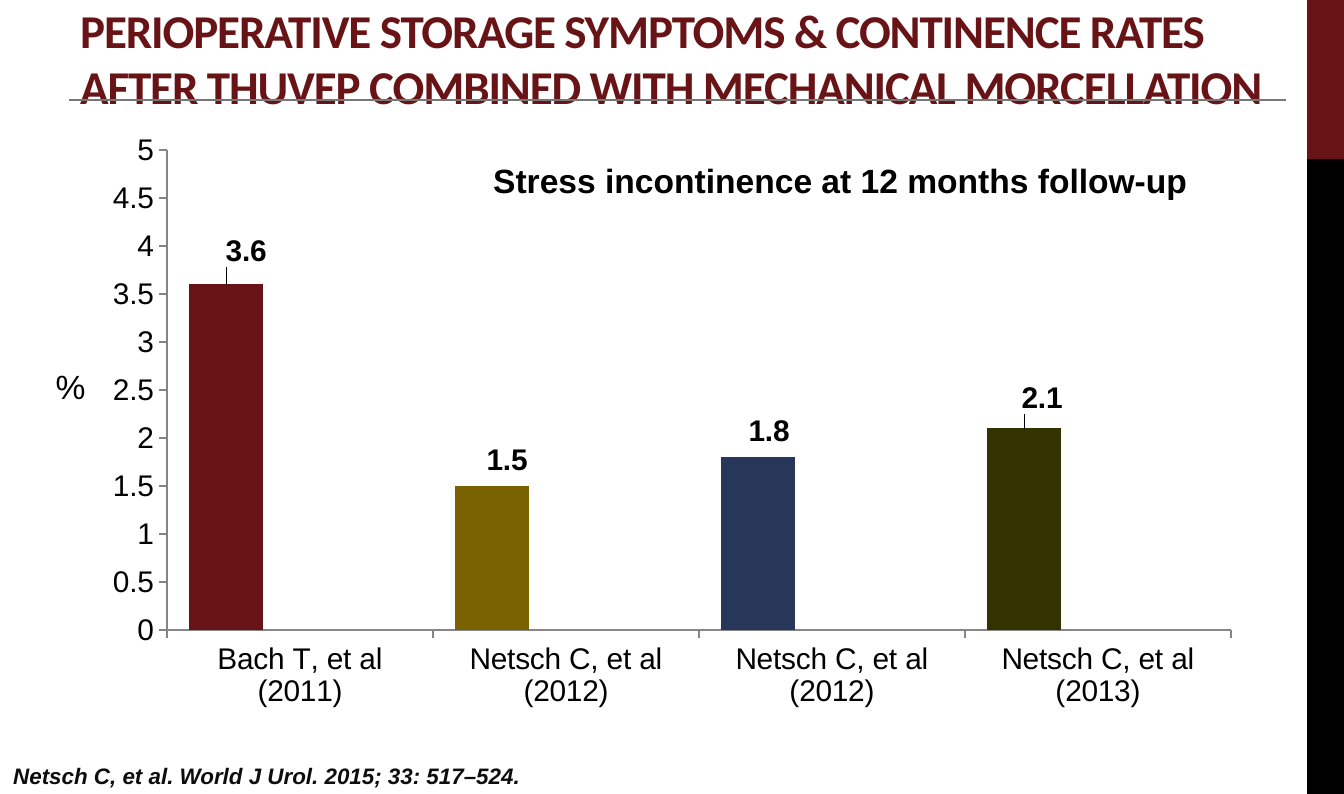
import pptx
import pptx.chart.data
import pptx.dml.color
import pptx.enum.chart
import pptx.enum.shapes
import pptx.enum.text
import pptx.oxml
import pptx.oxml.ns
import pptx.util

PX = 914400 / 134.4
THEME = {
    "maroon": "681417", "black": "000000", "citation": "0D0D0D",
    "rule": "777777", "axis": "868686",
    "bars": ["681417", "7A6100", "283659", "333300"],
    "series": ["7A7A7A", "F5C201", "526DB0"],
    "heading": "Calibri", "body": "Arial",
    "title_size": 25.2, "large": 18, "medium": 16, "small": 12,
}


def px(*lengths):
    return [pptx.util.Emu(round(length * PX)) for length in lengths]


def write(shape, text, size, color, font=THEME["body"], bold=False, align="LEFT", anchor="MIDDLE"):
    frame = shape.text_frame
    frame.word_wrap = True
    frame.vertical_anchor = pptx.enum.text.MSO_ANCHOR[anchor]
    frame.text = text
    paragraph = frame.paragraphs[0]
    paragraph.alignment = pptx.enum.text.PP_ALIGN[align]
    run = paragraph.runs[0]
    run.font.name = font
    run.font.size = pptx.util.Pt(size)
    run.font.bold = bold
    run.font.color.rgb = pptx.dml.color.RGBColor.from_string(color)
    return run


deck = pptx.Presentation()
deck.slide_width, deck.slide_height = px(1344, 794)
slide = deck.slides.add_slide(deck.slide_layouts[6])
shapes = slide.shapes

for top, height, color in [(0, 159, THEME["maroon"]), (159, 635, THEME["black"])]:
    band = shapes.add_shape(pptx.enum.shapes.MSO_SHAPE.RECTANGLE, *px(1307, top, 37, height))
    band.shadow.inherit = False
    band.fill.solid()
    band.fill.fore_color.rgb = pptx.dml.color.RGBColor.from_string(color)
    band.line.fill.background()

title = write(
    shapes.add_textbox(*px(67, 38, 1219, 83)),
    "PERIOPERATIVE STORAGE SYMPTOMS & CONTINENCE RATES AFTER THUVEP COMBINED WITH MECHANICAL MORCELLATION",
    THEME["title_size"], THEME["maroon"], THEME["heading"], bold=True, anchor="BOTTOM")
title.font._element.set("spc", "-60")

rule = shapes.add_connector(pptx.enum.shapes.MSO_CONNECTOR.STRAIGHT, *px(69, 100, 1286, 100))
rule.line.color.rgb = pptx.dml.color.RGBColor.from_string(THEME["rule"])
rule.line.width = pptx.util.Pt(1)
rule._element.spPr.append(pptx.oxml.parse_xml(
    f'<a:effectLst {pptx.oxml.ns.nsdecls("a")}/>'))

citation = write(
    shapes.add_textbox(*px(0, 757, 1307, 37)),
    "Netsch C, et al. World J Urol. 2015; 33: 517–524.",
    THEME["small"], THEME["citation"], bold=True)
citation.font.italic = True

rates = pptx.chart.data.CategoryChartData()
rates.categories = ["Bach T, et al (2011)", "Netsch C, et al (2012)",
                    "Netsch C, et al (2012)", "Netsch C, et al (2013)"]
rates.add_series("Series 1", [3.6, 1.5, 1.8, 2.1])
rates.add_series("Series 2", [None] * 4)
rates.add_series("Series 3", [None] * 4)
chart = shapes.add_chart(
    pptx.enum.chart.XL_CHART_TYPE.COLUMN_CLUSTERED, *px(90, 122, 1164, 597), rates).chart
chart.has_legend = False
chart.has_title = False
chart.font.name = THEME["body"]
chart.font.size = pptx.util.Pt(THEME["large"])
chart.font.color.rgb = pptx.dml.color.RGBColor.from_string(THEME["black"])

plot = chart.plots[0]
plot.gap_width = 60
plot.overlap = 0
plot.vary_by_categories = False

for axis in (chart.category_axis, chart.value_axis):
    axis.has_major_gridlines = False
    axis.major_tick_mark = pptx.enum.chart.XL_TICK_MARK.OUTSIDE
    axis.tick_labels.font.size = pptx.util.Pt(THEME["medium"])
    axis.format.line.color.rgb = pptx.dml.color.RGBColor.from_string(THEME["axis"])
chart.value_axis.minimum_scale = 0
chart.value_axis.maximum_scale = 5
chart.value_axis.major_unit = 0.5

for series, color in zip(plot.series, THEME["series"]):
    series.format.fill.solid()
    series.format.fill.fore_color.rgb = pptx.dml.color.RGBColor.from_string(color)

stress_rates = plot.series[0]
labels = stress_rates.data_labels
labels.show_value = True
labels.font.size = pptx.util.Pt(THEME["medium"])
labels.font.bold = True

label_shifts = [(20, -12), (15, -5), (11, -5), (18, -9)]
for index, (color, (right, down)) in enumerate(zip(THEME["bars"], label_shifts)):
    point = stress_rates.points[index]
    point.format.fill.solid()
    point.format.fill.fore_color.rgb = pptx.dml.color.RGBColor.from_string(color)
    label = point.data_label
    label.font.size = pptx.util.Pt(THEME["medium"])
    label.font.bold = True
    label.position = pptx.enum.chart.XL_LABEL_POSITION.OUTSIDE_END
    label_xml = labels._element.xpath(f"c:dLbl[c:idx/@val='{index}']")[0]
    label_xml.insert(1, pptx.oxml.parse_xml(
        f'<c:layout {pptx.oxml.ns.nsdecls("c")}><c:manualLayout>'
        f'<c:x val="{right / 1164:.4f}"/><c:y val="{down / 597:.4f}"/>'
        '</c:manualLayout></c:layout>'))

plot_area = chart._chartSpace.chart.plotArea
for old_layout in plot_area.xpath("c:layout"):
    plot_area.remove(old_layout)
plot_area.insert(0, pptx.oxml.parse_xml(
    f'<c:layout {pptx.oxml.ns.nsdecls("c")}><c:manualLayout>'
    '<c:layoutTarget val="inner"/><c:xMode val="edge"/><c:yMode val="edge"/>'
    f'<c:x val="{77 / 1164:.4f}"/><c:y val="{28 / 597:.4f}"/>'
    f'<c:w val="{1064 / 1164:.4f}"/><c:h val="{480 / 597:.4f}"/>'
    '</c:manualLayout></c:layout>'))

heading = shapes.add_shape(
    pptx.enum.shapes.MSO_SHAPE.ROUNDED_RECTANGLE, *px(470, 143, 741, 74))
heading.shadow.inherit = False
heading.fill.background()
heading.line.fill.background()
write(heading, "Stress incontinence at 12 months follow-up",
      THEME["large"], THEME["black"], bold=True, align="CENTER")

write(shapes.add_textbox(*px(28, 355, 85, 63)), "%",
      THEME["large"], THEME["black"], align="CENTER")

deck.save("out.pptx")
